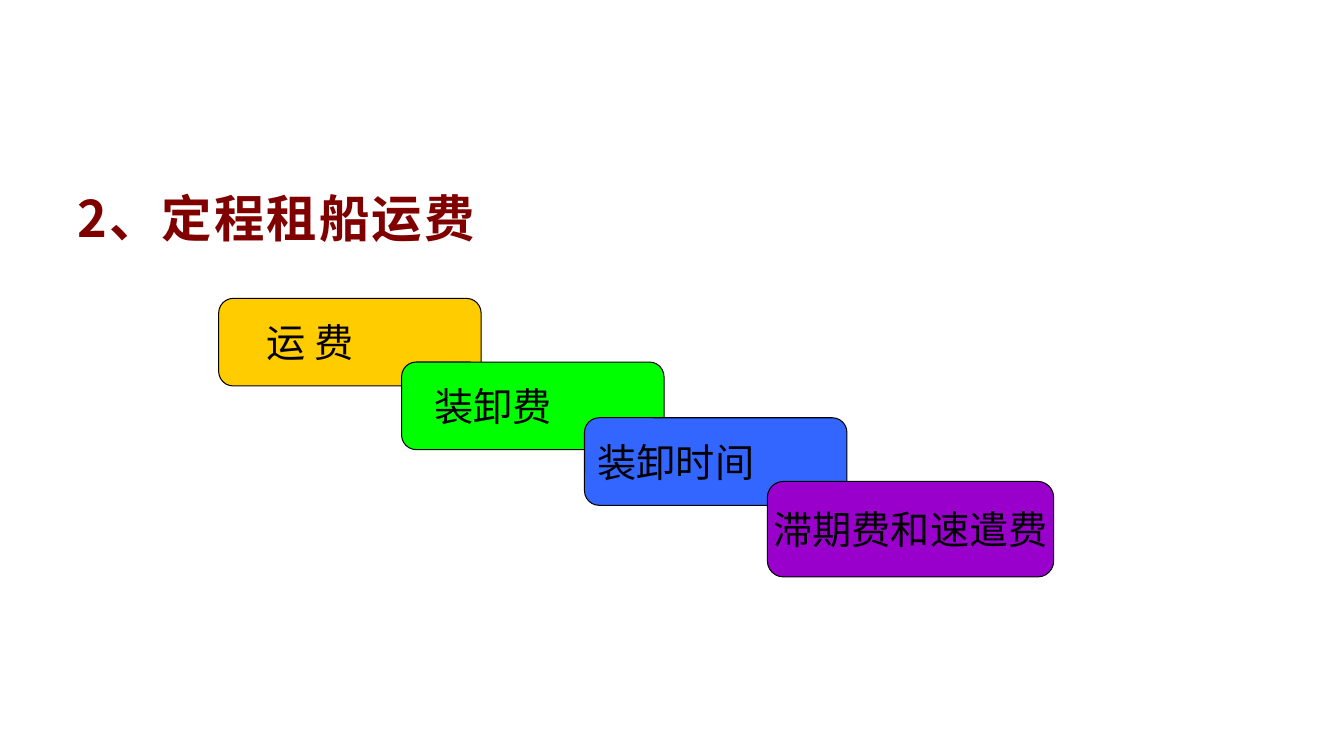
from dataclasses import dataclass

from lxml import etree
from pptx import Presentation
from pptx.dml.color import RGBColor
from pptx.enum.shapes import MSO_SHAPE
from pptx.enum.text import MSO_ANCHOR, PP_ALIGN
from pptx.oxml.ns import qn
from pptx.slide import Slide
from pptx.text.text import _Paragraph
from pptx.util import Inches, Pt

ROUNDED_BOX = MSO_SHAPE.FLOWCHART_ALTERNATE_PROCESS
MIDDLE = MSO_ANCHOR.MIDDLE
CENTER = PP_ALIGN.CENTER

BLACK = RGBColor(0x00, 0x00, 0x00)
MAROON = RGBColor(0x80, 0x00, 0x00)
GOLD = RGBColor(0xFF, 0xCC, 0x00)
GREEN = RGBColor(0x00, 0xFF, 0x00)
BLUE = RGBColor(0x33, 0x66, 0xFF)
PURPLE = RGBColor(0x99, 0x00, 0xCC)

LATIN_FONT = "Arial"
CHINESE_FONT = "Noto Sans CJK SC"

SLIDE_WIDTH = Inches(13.33)
SLIDE_HEIGHT = Inches(7.5)
COLUMN = SLIDE_WIDTH / 169
ROW = SLIDE_HEIGHT / 95

FIRST_STEP_COLUMN = 27.5
STEP_COLUMNS = 23
LABEL_MARGIN = Inches(0.1)


@dataclass(frozen=True)
class Step:
    text: str
    fill: RGBColor
    row: float
    columns: int = 33
    rows: int = 11


STEPS = (
    Step("运 费", GOLD, 37.5),
    Step("装卸费", GREEN, 45.5),
    Step("装卸时间", BLUE, 52.5),
    Step("滞期费和速遣费", PURPLE, 60.5, columns=36, rows=12),
)


def grid_box(column: float, row: float, columns: float, rows: float) -> tuple[int, ...]:
    return (
        round(column * COLUMN),
        round(row * ROW),
        round(columns * COLUMN),
        round(rows * ROW),
    )


def write_text(paragraph: _Paragraph, text: str, font: str, size: int, color: RGBColor) -> None:
    run = paragraph.add_run()
    run.text = text
    paragraph.font.name = font
    paragraph.font.size = Pt(size)
    paragraph.font.color.rgb = color
    run_properties = run.font._element
    east_asian = etree.SubElement(run_properties, qn("a:ea"))
    east_asian.set("typeface", CHINESE_FONT)


def add_title(slide: Slide, text: str) -> None:
    text_box = slide.shapes.add_textbox(*grid_box(8.5, 20.6, 152, 66))
    text_box.text_frame.word_wrap = True
    paragraph = text_box.text_frame.paragraphs[0]
    write_text(paragraph, text, CHINESE_FONT, 36, MAROON)
    paragraph.font.bold = True
    paragraph.line_spacing = 1.3
    paragraph.space_after = Pt(10)
    paragraph_properties = paragraph._p.get_or_add_pPr()
    paragraph_properties.set("marL", str(Inches(0.25)))
    paragraph_properties.set("indent", str(-Inches(0.25)))
    paragraph.runs[0].font._element.set("spc", "150")


def add_step(slide: Slide, step: Step, index: int, covered_columns: int) -> None:
    column = FIRST_STEP_COLUMN + index * STEP_COLUMNS
    shape = slide.shapes.add_shape(
        ROUNDED_BOX, *grid_box(column, step.row, step.columns, step.rows)
    )
    shape.shadow.inherit = False
    shape.fill.solid()
    shape.fill.fore_color.rgb = step.fill
    shape.line.color.rgb = BLACK
    shape.line.width = Pt(0.75)
    text_frame = shape.text_frame
    text_frame.word_wrap = False
    text_frame.vertical_anchor = MIDDLE
    text_frame.margin_left = LABEL_MARGIN
    text_frame.margin_right = LABEL_MARGIN + round(covered_columns * COLUMN)
    paragraph = text_frame.paragraphs[0]
    paragraph.alignment = CENTER
    write_text(paragraph, step.text, LATIN_FONT, 28, BLACK)


def main() -> None:
    presentation = Presentation()
    presentation.slide_width = SLIDE_WIDTH
    presentation.slide_height = SLIDE_HEIGHT
    slide = presentation.slides.add_slide(presentation.slide_layouts[6])
    add_title(slide, "2、定程租船运费")
    for index, step in enumerate(STEPS):
        is_last = index == len(STEPS) - 1
        covered_columns = 0 if is_last else step.columns - STEP_COLUMNS
        add_step(slide, step, index, covered_columns)
    presentation.save("out.pptx")


if __name__ == "__main__":
    main()
